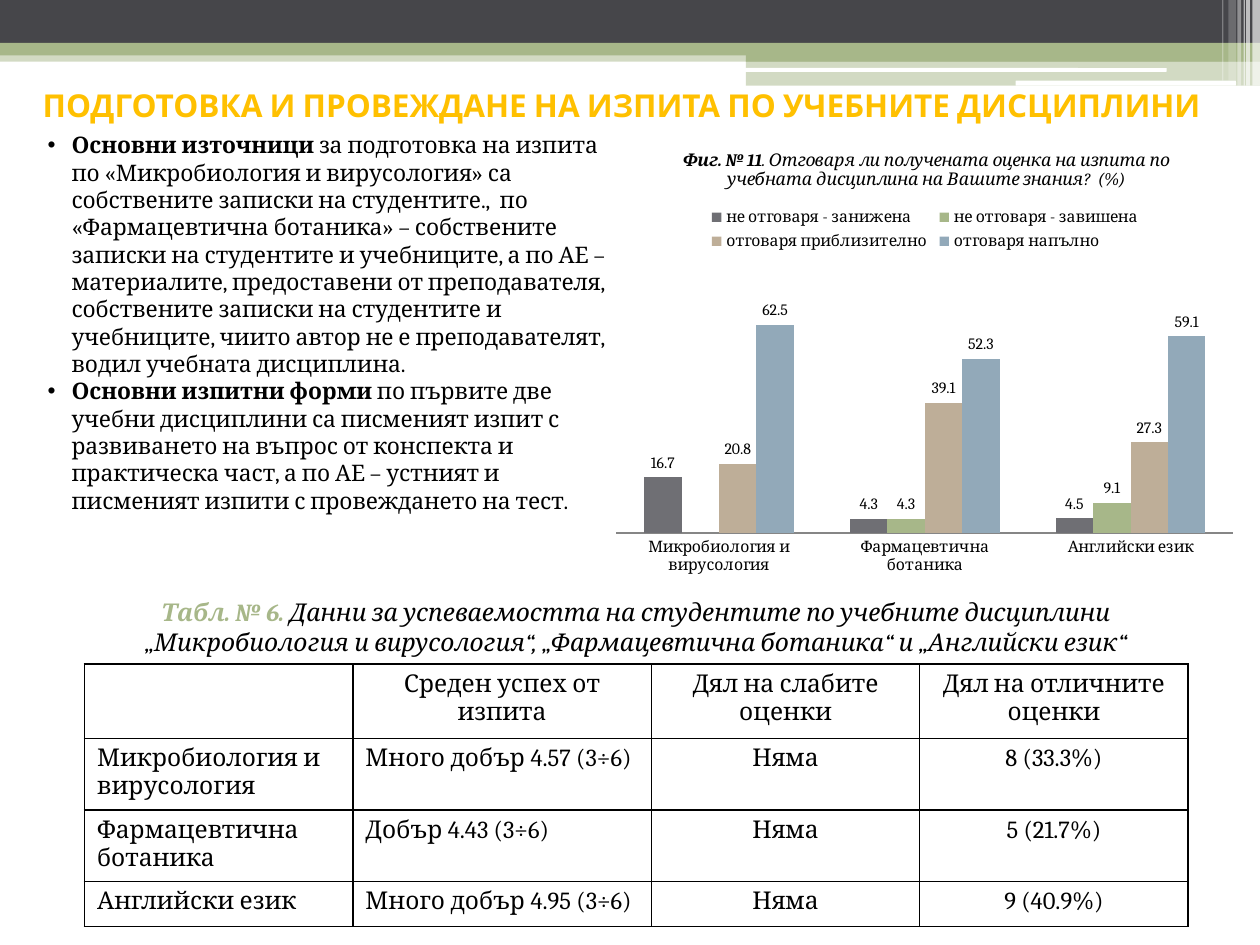
from lxml import etree
from pptx import Presentation
from pptx.chart.data import CategoryChartData
from pptx.dml.color import RGBColor
from pptx.enum.chart import XL_CHART_TYPE, XL_LABEL_POSITION, XL_LEGEND_POSITION, XL_TICK_MARK
from pptx.enum.shapes import MSO_SHAPE
from pptx.enum.text import MSO_ANCHOR, PP_ALIGN
from pptx.oxml import parse_xml
from pptx.oxml.ns import nsdecls, qn
from pptx.util import Inches, Pt

RECT, ROUND = MSO_SHAPE.RECTANGLE, MSO_SHAPE.ROUNDED_RECTANGLE
LEFT, CENTER = PP_ALIGN.LEFT, PP_ALIGN.CENTER
MIDDLE, TOP = MSO_ANCHOR.MIDDLE, MSO_ANCHOR.TOP
COLUMNS = XL_CHART_TYPE.COLUMN_CLUSTERED
OUTSIDE = XL_LABEL_POSITION.OUTSIDE_END
LEGEND_TOP = XL_LEGEND_POSITION.TOP
NO_TICK = XL_TICK_MARK.NONE

BLACK = RGBColor(0, 0, 0)
WHITE = RGBColor(255, 255, 255)
DARK = RGBColor(0x46, 0x46, 0x4A)
GREEN = RGBColor(0xA7, 0xB7, 0x89)
GOLD = RGBColor(0xFF, 0xC0, 0)
GRAY = RGBColor(0x6F, 0x6F, 0x74)
SAND = RGBColor(0xBE, 0xAE, 0x98)
BLUE = RGBColor(0x92, 0xA9, 0xB9)
AXIS = RGBColor(0x86, 0x86, 0x86)

SUBJECTS = ["Микробиология и вирусология", "Фармацевтична ботаника", "Английски език"]
SERIES = [
    ("не отговаря - занижена", (16.7, 4.3, 4.5), GRAY),
    ("не отговаря - завишена", (None, 4.3, 9.1), GREEN),
    ("отговаря приблизително", (20.8, 39.1, 27.3), SAND),
    ("отговаря напълно", (62.5, 52.3, 59.1), BLUE),
]
SOURCES = [
    ("Основни източници",
     " за подготовка на изпита по «Микробиология и вирусология» са собствените "
     "записки на студентите.,  по «Фармацевтична ботаника» – собствените записки "
     "на студентите и учебниците, а по АЕ – материалите, предоставени от "
     "преподавателя, собствените записки на студентите и учебниците, чиито автор "
     "не е преподавателят, водил учебната дисциплина."),
    ("Основни изпитни форми ",
     "по първите две учебни дисциплини са писменият изпит с развиването на въпрос "
     "от конспекта и практическа част, а по АЕ – устният и писменият изпити с "
     "провеждането на тест."),
]
GRADES = [
    ["", "Среден успех от изпита", "Дял на слабите оценки", "Дял на отличните оценки"],
    [SUBJECTS[0], "Много добър 4.57 (3÷6)", "Няма", "8 (33.3%)"],
    [SUBJECTS[1], "Добър 4.43 (3÷6)", "Няма", "5 (21.7%)"],
    [SUBJECTS[2], "Много добър 4.95 (3÷6)", "Няма", "9 (40.9%)"],
]


def write(par, text, size=14, color=BLACK, bold=False, italic=False,
          face="Cambria", align=None):
    run = par.add_run()
    run.text = text
    style(run.font, size, color, bold, italic, face)
    if align is not None:
        par.alignment = align


def style(font, size, color=BLACK, bold=False, italic=False, face="Cambria"):
    font.size, font.bold, font.italic, font.name = Pt(size), bold, italic, face
    font.color.rgb = color


def frame(slide, box, anchor=TOP):
    """Add a wrapping text box and return its text frame."""
    text = slide.shapes.add_textbox(*map(Inches, box)).text_frame
    text.word_wrap = True
    text.vertical_anchor = anchor
    return text


def block(slide, box, color, alpha=100, kind=RECT):
    """Add a plain filled shape; alpha is its opacity in percent."""
    shape = slide.shapes.add_shape(kind, *map(Inches, box))
    shape.shadow.inherit = False
    shape.line.fill.background()
    shape.fill.solid()
    shape.fill.fore_color.rgb = color
    if alpha < 100:
        tone = shape.fill._xPr.find(".//" + qn("a:srgbClr"))
        etree.SubElement(tone, qn("a:alpha"), val=str(alpha * 1000))


def banner(slide, x, y, width):
    mid, right = x + 5.92, x + width
    half = width - 5.92
    block(slide, (x, y + 0.4, width, 0.09), GREEN, 50)
    block(slide, (x, y, width, 0.34), DARK)
    block(slide, (x, y + 0.34, width, 0.1), GREEN)
    block(slide, (mid, y + 0.39, half, 0.1), GREEN)
    block(slide, (mid, y + 0.48, half, 0.2), GREEN, 50)
    block(slide, (mid - 0.01, y + 0.54, 3.35, 0.03), WHITE, kind=ROUND)
    block(slide, (mid + 2.14, y + 0.64, 1.75, 0.04), WHITE, kind=ROUND)
    stripes = [(0.06, 0.06, 0.68, 65), (0.11, 0.03, 0.68, 65), (0.13, 0.01, 0.68, 60),
               (0.18, 0.03, 0.68, 40), (0.25, 0.06, 0.64, 20), (0.3, 0.01, 0.64, 30)]
    for back, wide, high, alpha in stripes:
        block(slide, (right - back, y, wide, high), WHITE, alpha)


def bullets(slide, box):
    text = frame(slide, box)
    for i, (lead, rest) in enumerate(SOURCES):
        par = text.add_paragraph() if i else text.paragraphs[0]
        write(par, lead, size=13, bold=True)
        write(par, rest, size=13)
        props = par._p.get_or_add_pPr()
        props.set("marL", str(Inches(0.19)))
        props.set("indent", str(-Inches(0.19)))
        etree.SubElement(props, qn("a:buFont"), typeface="Arial")
        etree.SubElement(props, qn("a:buChar"), char="•")


def place(part, index, inner=False, **sizes):
    """Give a chart part a manual layout in fractions of the chart."""
    for old in part.findall(qn("c:layout")):
        part.remove(old)
    target = '<c:layoutTarget val="inner"/>' if inner else ""
    modes = "".join(f'<c:{a}Mode val="edge"/>' for a in "xy")
    values = "".join(f'<c:{key} val="{val}"/>' for key, val in sizes.items())
    part.insert(index, parse_xml(
        f'<c:layout {nsdecls("c")}><c:manualLayout>{target}{modes}{values}'
        "</c:manualLayout></c:layout>"))


def answers(slide, box):
    data = CategoryChartData(number_format="0.0")
    data.categories = SUBJECTS
    for name, vals, _ in SERIES:
        data.add_series(name, vals)
    chart = slide.shapes.add_chart(COLUMNS, *map(Inches, box), data).chart
    style(chart.font, 10)

    par = chart.chart_title.text_frame.paragraphs[0]
    write(par, "Фиг. № 11", size=10, bold=True, italic=True)
    write(par, ". Отговаря ли получената оценка на изпита по учебната дисциплина "
          "на Вашите знания?  (%)", size=10, italic=True)
    chart.has_legend = True
    chart.legend.position = LEGEND_TOP
    chart.legend.include_in_layout = False
    style(chart.legend.font, 9)

    cats, vals = chart.category_axis, chart.value_axis
    cats.major_tick_mark = NO_TICK
    style(cats.tick_labels.font, 9)
    cats.format.line.color.rgb = AXIS
    vals.visible = vals.has_major_gridlines = False
    vals.minimum_scale, vals.maximum_scale = 0, 70

    plot = chart.plots[0]
    plot.gap_width, plot.overlap = 150, 0
    plot.vary_by_categories = False
    for series, (_, _, color) in zip(plot.series, SERIES):
        series.format.fill.solid()
        series.format.fill.fore_color.rgb = color
        labels = series.data_labels
        labels.show_value = True
        labels.number_format, labels.number_format_is_linked = "0.0", False
        labels.position = OUTSIDE
        style(labels.font, 9)

    root = chart._chartSpace.find(qn("c:chart"))
    place(root.find(qn("c:title")), 1, x=0.11, y=0.04)
    place(root.find(qn("c:legend")), 1, x=0.15, y=0.16, w=0.7, h=0.11)
    place(root.find(qn("c:plotArea")), 0, inner=True, x=0.01, y=0.36, w=0.98, h=0.48)


def border(cell):
    props = cell._tc.get_or_add_tcPr()
    for i, side in enumerate(("lnL", "lnR", "lnT", "lnB")):
        props.insert(i, parse_xml(
            f'<a:{side} {nsdecls("a")} w="{Pt(1)}"><a:solidFill>'
            f'<a:srgbClr val="{BLACK}"/></a:solidFill></a:{side}>'))


def grades(slide, box):
    table = slide.shapes.add_table(4, 4, *map(Inches, box)).table
    for col, width in zip(table.columns, (2.13, 2.37, 2.13, 2.13)):
        col.width = Inches(width)
    for row, height in zip(table.rows, (0.59, 0.55, 0.55, 0.36)):
        row.height = Inches(height)
    for r, line in enumerate(GRADES):
        for c, text in enumerate(line):
            cell = table.cell(r, c)
            cell.fill.background()
            border(cell)
            if text:
                write(cell.text_frame.paragraphs[0], text,
                      align=CENTER if r == 0 or c > 1 else LEFT)


def main():
    deck = Presentation()
    deck.slide_width, deck.slide_height = Inches(10), Inches(7.5)
    slide = deck.slides.add_slide(deck.slide_layouts[6])
    banner(slide, 0, 0, 10)
    head = frame(slide, (0.24, 0.6, 9.61, 0.47), MIDDLE).paragraphs[0]
    write(head, "ПОДГОТОВКА И ПРОВЕЖДАНЕ НА ИЗПИТА ПО УЧЕБНИТЕ ДИСЦИПЛИНИ",
          size=18, color=GOLD, bold=True, face="Cabin")
    bullets(slide, (0.28, 0.99, 4.76, 3.15))
    grades(slide, (0.67, 5.27, 8.77, 2.08))
    note = frame(slide, (0.6, 4.69, 8.9, 0.57)).paragraphs[0]
    write(note, "Табл. № 6. ", color=GREEN, bold=True, italic=True, align=CENTER)
    write(note, "Данни за успеваемостта на студентите по учебните дисциплини "
          "„Микробиология и вирусология“, „Фармацевтична ботаника“ и "
          "„Английски език“", italic=True)
    answers(slide, (4.84, 0.99, 5, 3.86))
    deck.save("out.pptx")


if __name__ == "__main__":
    main()
